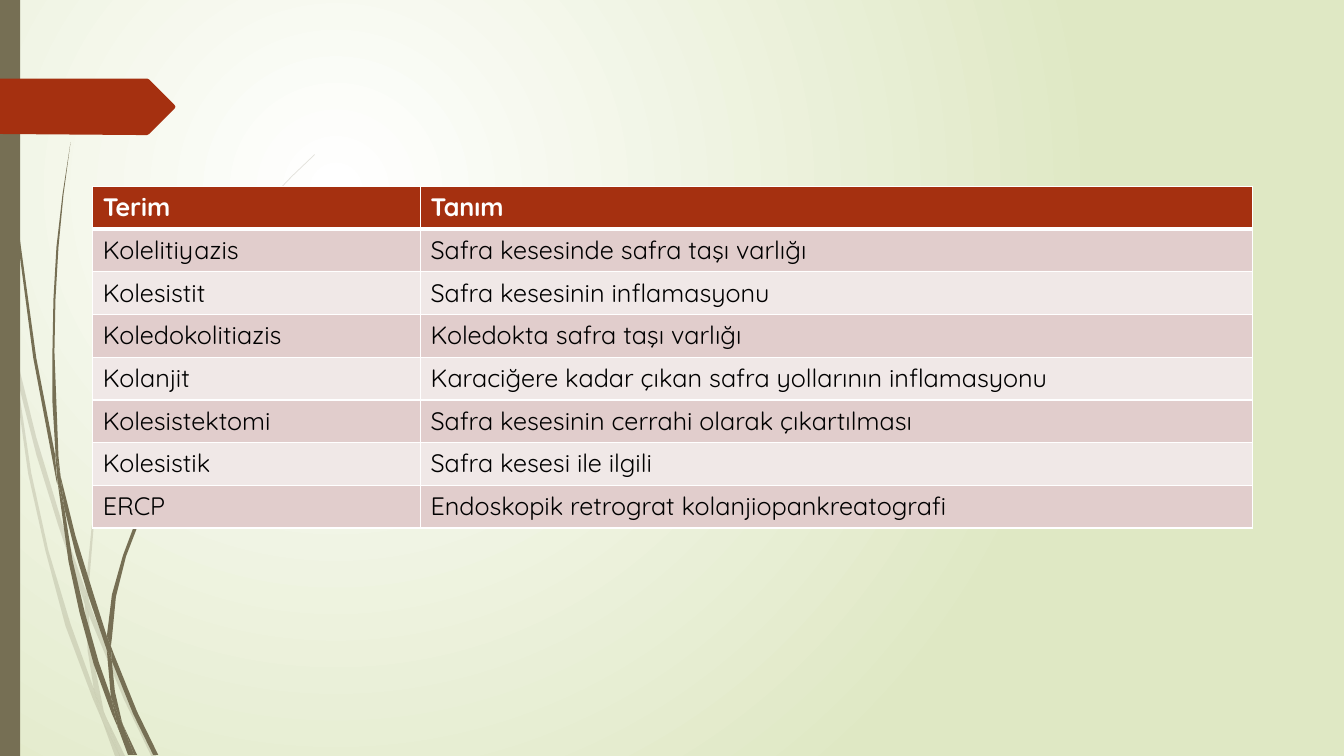
from lxml import etree
from pptx import Presentation
from pptx.dml.color import RGBColor
from pptx.enum.shapes import MSO_SHAPE
from pptx.oxml.ns import qn
from pptx.util import Pt

PX = 9144
RECTANGLE = MSO_SHAPE.RECTANGLE
THEME = {
    "font": "Quicksand", "size": 18,
    "glow": "FFFFFF", "meadow": "DFE8C4",
    "stem": "766F54", "pale_alpha": 20000,
    "accent": "A53010", "bands": ("F0E8E7", "E1CDCC"),
    "header_text": "FFFFFF", "body_text": "000000",
    "rule": "FFFFFF", "thin": 1, "thick": 3,
}

PALE_GRASS = [
    [(11, 350), (9, 322), (0, 282), (0, 299), (10, 344)],
    [(58, 522), (84, 599), (85, 586), (62, 520), (36, 434), (14, 345), (17, 376), (36, 451)],
    [(92, 607), (88, 596), (88, 610), (123, 694), (150, 750), (155, 750), (127, 692)],
    [(119, 750), (124, 750), (105, 711)],
    [(93, 683), (70, 619), (48, 546), (31, 469), (17, 376), (11, 350), (28, 470),
     (45, 546), (65, 621), (92, 693), (101, 714), (99, 707)],
    [(84, 599), (87, 646), (93, 683), (96, 692), (105, 711), (103, 706), (91, 646),
     (88, 610), (88, 608)],
    [(88, 584), (93, 522), (110, 462), (132, 405), (160, 349), (193, 296), (229, 245),
     (268, 198), (290, 175), (312, 154), (312, 153), (289, 175), (268, 197), (228, 244),
     (191, 295), (158, 348), (130, 403), (107, 461), (91, 522), (85, 584), (85, 586),
     (88, 596)],
    [(101, 714), (114, 750), (119, 750)],
    [(88, 608), (88, 610), (88, 596), (85, 586), (84, 599)],
    [(96, 692), (93, 683), (99, 707), (101, 714), (119, 750), (105, 711)],
]
DARK_GRASS = [
    [(7, 110), (17, 233), (33, 355), (56, 477), (57, 481), (55, 457), (55, 453),
     (36, 355), (19, 232), (8, 109), (5, 48), (4, 0), (3, 0), (4, 48)],
    [(88, 592), (106, 645), (106, 631), (93, 590), (75, 532), (60, 472), (64, 505), (75, 549)],
    [(113, 649), (110, 641), (111, 656), (132, 708), (152, 749), (157, 749), (136, 706)],
    [(110, 691), (98, 657), (84, 607), (72, 556), (64, 505), (57, 477), (68, 557),
     (79, 608), (93, 659), (111, 708), (117, 722), (116, 717)],
    [(60, 472), (58, 453), (54, 349), (55, 297), (58, 245), (63, 193), (70, 141),
     (62, 193), (56, 245), (53, 297), (52, 349), (52, 399), (55, 449)],
    [(133, 749), (136, 749), (122, 719)],
    [(57, 477), (64, 505), (60, 472), (55, 449), (55, 453)],
    [(111, 633), (115, 592), (125, 552), (140, 513), (158, 476), (180, 440), (205, 406),
     (231, 374), (245, 359), (261, 344), (260, 344), (245, 358), (231, 373), (204, 405),
     (178, 439), (156, 474), (137, 511), (122, 551), (111, 590), (106, 631), (110, 641)],
    [(117, 722), (127, 749), (131, 749)],
    [(106, 645), (110, 691), (116, 706), (122, 719), (121, 716), (114, 686), (111, 656),
     (109, 651)],
    [(106, 645), (109, 651), (111, 656), (110, 641), (106, 631), (106, 633)],
    [(116, 706), (110, 691), (116, 717), (117, 722), (130, 749), (133, 749), (122, 719)],
]
PENTAGON = [(173, 108), (148, 133), (146, 134), (136, 134), (0, 133), (0, 78),
            (146, 78), (148, 79), (173, 104), (174, 106)]

TERMS = [
    ("Terim", "Tanım"),
    ("Kolelitiyazis", "Safra kesesinde safra taşı varlığı"),
    ("Kolesistit", "Safra kesesinin inflamasyonu"),
    ("Koledokolitiazis", "Koledokta safra taşı varlığı"),
    ("Kolanjit", "Karaciğere kadar çıkan safra yollarının inflamasyonu"),
    ("Kolesistektomi", "Safra kesesinin cerrahi olarak çıkartılması"),
    ("Kolesistik", "Safra kesesi ile ilgili"),
    ("ERCP", "Endoskopik retrograt kolanjiopankreatografi"),
]
TABLE_LEFT, TABLE_TOP, TABLE_HEIGHT = 92, 185, 339
COLUMN_WIDTHS = (325, 825)


def paint(shape, color):
    shape.shadow.inherit = False
    shape.fill.solid()
    shape.fill.fore_color.rgb = RGBColor.from_string(color)
    shape.line.fill.background()


def draw_outline(shapes, points, color):
    builder = shapes.build_freeform(*points[0], scale=PX)
    builder.add_line_segments(points[1:], close=True)
    outline = builder.convert_to_shape()
    paint(outline, color)
    return outline


prs = Presentation()
prs.slide_width, prs.slide_height = 1333 * PX, 750 * PX
slide = prs.slides.add_slide(prs.slide_layouts[6])

backdrop = slide.background.fill
backdrop.gradient()
for stop, position, color in zip(backdrop.gradient_stops, (0, 1), (THEME["glow"], THEME["meadow"])):
    stop.position = position
    stop.color.rgb = RGBColor.from_string(color)
gradient = slide.element.find(".//" + qn("a:gradFill"))
gradient.remove(gradient.find(qn("a:lin")))
circle = etree.SubElement(gradient, qn("a:path"), {"path": "circle"})
etree.SubElement(circle, qn("a:fillToRect"), {"l": "50000", "t": "50000", "r": "100000", "b": "100000"})

for blades, alpha in ((PALE_GRASS, THEME["pale_alpha"]), (DARK_GRASS, None)):
    tuft = slide.shapes.add_group_shape()
    for points in blades:
        blade = draw_outline(tuft.shapes, points, THEME["stem"])
        if alpha:
            stem_color = blade.element.spPr.find(qn("a:solidFill")).find(qn("a:srgbClr"))
            etree.SubElement(stem_color, qn("a:alpha"), {"val": str(alpha)})

side_bar = slide.shapes.add_shape(RECTANGLE, 0, 0, 20 * PX, prs.slide_height)
paint(side_bar, THEME["stem"])
draw_outline(slide.shapes, PENTAGON, THEME["accent"])

glossary = slide.shapes.add_table(
    len(TERMS), len(COLUMN_WIDTHS), TABLE_LEFT * PX, TABLE_TOP * PX,
    sum(COLUMN_WIDTHS) * PX, TABLE_HEIGHT * PX).table
for column, width in zip(glossary.columns, COLUMN_WIDTHS):
    column.width = width * PX
for row_index, entry in enumerate(TERMS):
    is_header = row_index == 0
    glossary.rows[row_index].height = TABLE_HEIGHT * PX // len(TERMS)
    for column_index, wording in enumerate(entry):
        cell = glossary.cell(row_index, column_index)
        cell.text_frame.text = wording
        font = cell.text_frame.paragraphs[0].runs[0].font
        font.name, font.size, font.bold = THEME["font"], Pt(THEME["size"]), is_header
        font.color.rgb = RGBColor.from_string(THEME["header_text" if is_header else "body_text"])
        cell_format = cell._tc.get_or_add_tcPr()
        for side in ("lnL", "lnR", "lnT", "lnB"):
            under_header = (row_index, side) in ((0, "lnB"), (1, "lnT"))
            weight = THEME["thick" if under_header else "thin"]
            border = etree.SubElement(cell_format, qn("a:" + side), {"w": str(Pt(weight))})
            border_fill = etree.SubElement(border, qn("a:solidFill"))
            etree.SubElement(border_fill, qn("a:srgbClr"), {"val": THEME["rule"]})
        cell.fill.solid()
        cell.fill.fore_color.rgb = RGBColor.from_string(
            THEME["accent"] if is_header else THEME["bands"][row_index % 2])

prs.save("out.pptx")
